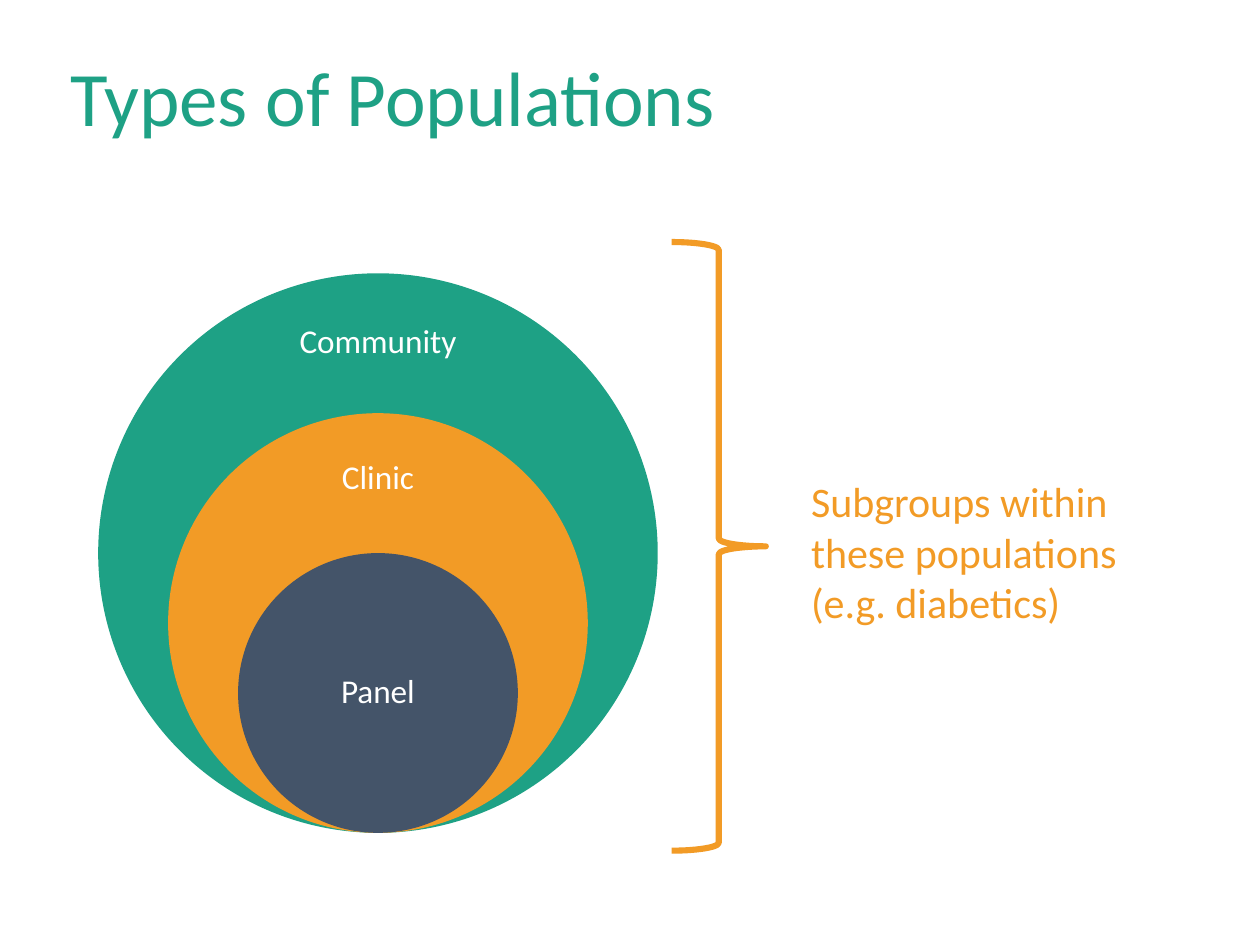
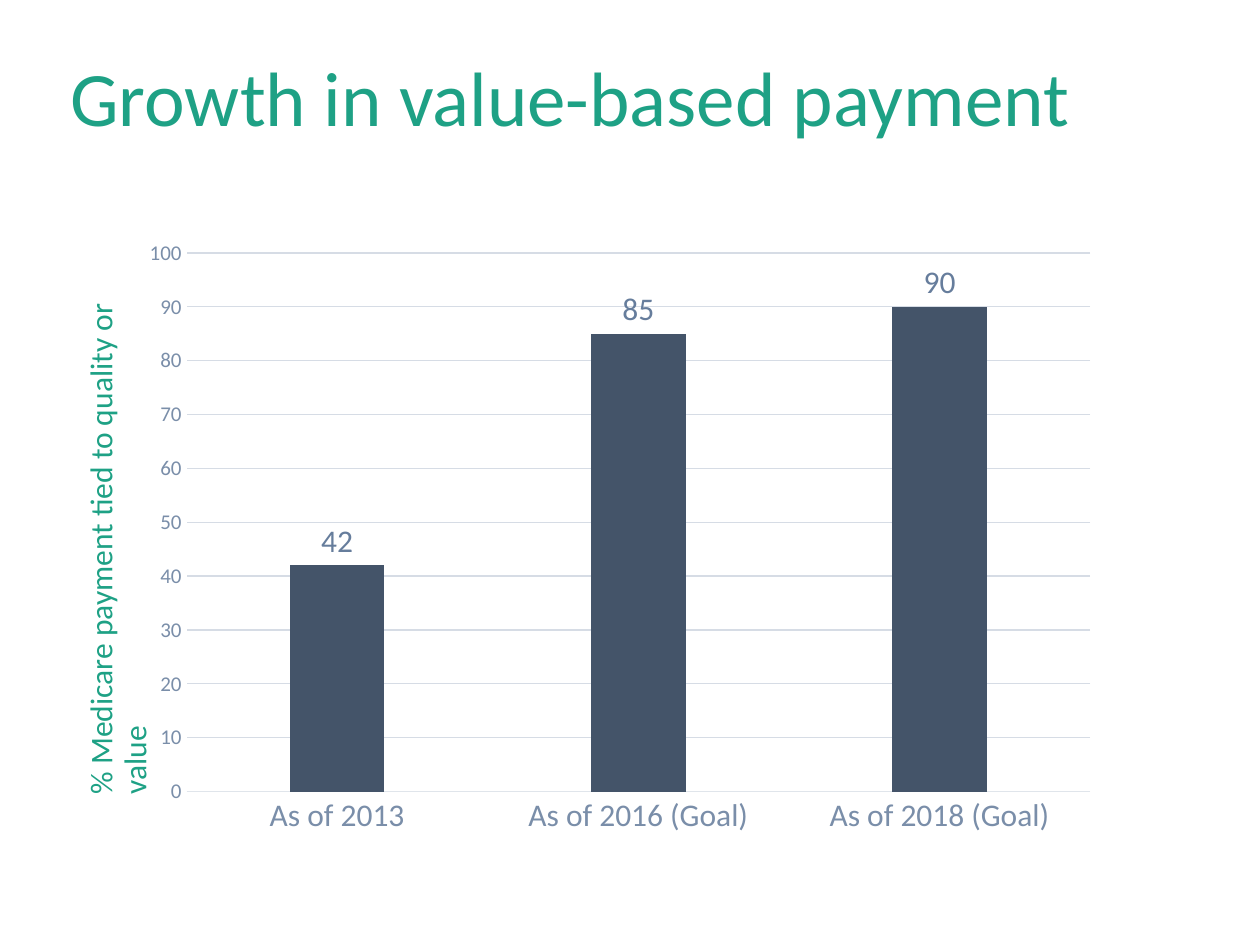
from dataclasses import dataclass
from typing import Any

from lxml import etree
from pptx import Presentation
from pptx import util as u
from pptx.chart.data import CategoryChartData
from pptx.dml.color import RGBColor
from pptx.enum import chart as ch
from pptx.enum import shapes, text

FONT = "Calibri"
HEX = {
    "green": "1EA185",
    "gold": "F29B26",
    "slate": "445469",
    "white": "FFFFFF",
    "axis": "7A8EA9",
    "value": "667D9C",
    "base": "E0E5EB",
    "grid": "D6DCE5",
}
HEAD = {
    "margin_left": u.Cm(0.25),
    "margin_right": u.Cm(0.25),
    "margin_top": u.Cm(0.03),
    "margin_bottom": u.Cm(0.13),
    "vertical_anchor": text.MSO_ANCHOR.TOP,
    "auto_size": text.MSO_AUTO_SIZE.NONE,
    "word_wrap": True,
}
NOTE = {"word_wrap": True}
LABEL = {"word_wrap": True, "vertical_anchor": text.MSO_ANCHOR.MIDDLE}
LEFT = {"alignment": text.PP_ALIGN.LEFT, "line_spacing": 0.9}
MID = {"alignment": text.PP_ALIGN.CENTER, "line_spacing": 0.9}


@dataclass
class Box:
    """A place on the slide, in centimetres."""
    left: float
    top: float
    width: float
    height: float

    def cm(self) -> list[u.Cm]:
        return [u.Cm(v) for v in (self.left, self.top, self.width, self.height)]


@dataclass
class Ring:
    name: str
    hue: str
    size: float
    mid: float  # height of the centre of the label


RINGS = [
    Ring("Community", "green", 11.28, 6.92),
    Ring("Clinic", "gold", 8.46, 9.65),
    Ring("Panel", "slate", 5.64, 13.96),
]
CENTRE, FLOOR = 7.62, 16.79


def rgb(hue: str) -> RGBColor:
    return RGBColor.from_string(HEX[hue])


def put(obj: Any, form: dict[str, Any]) -> None:
    """Set each format value on the object."""
    for key, val in form.items():
        setattr(obj, key, val)


def ink(font: Any, size: float, hue: str) -> None:
    put(font, {"name": FONT, "size": u.Pt(size)})
    font.color.rgb = rgb(hue)


def stroke(line: Any, hue: str, width: float) -> None:
    line.color.rgb = rgb(hue)
    line.width = u.Pt(width)


def write(shape: Any, words: str, size: float, hue: str,
          frame: dict[str, Any], para: dict[str, Any]) -> None:
    body = shape.text_frame
    body.text = words
    put(body, frame)
    put(body.paragraphs[0], para)
    ink(body.paragraphs[0].runs[0].font, size, hue)


def start(prs: Any, title: str) -> Any:
    """Add a slide with its title."""
    slide = prs.slides.add_slide(prs.slide_layouts[5])
    head = slide.shapes.title
    put(head, dict(zip(("left", "top", "width", "height"),
                       Box(1.17, 1.17, 22.86, 2).cm())))
    write(head, title, 44, "green", HEAD, LEFT)
    return slide


def ring(slide: Any, item: Ring) -> None:
    place = Box(CENTRE - item.size / 2, FLOOR - item.size, item.size, item.size)
    disc = slide.shapes.add_shape(shapes.MSO_SHAPE.OVAL, *place.cm())
    disc.shadow.inherit = False
    disc.fill.solid()
    disc.fill.fore_color.rgb = rgb(item.hue)
    disc.line.fill.background()
    wide, high = 4, 1.6
    spot = Box(CENTRE - wide / 2, item.mid - high / 2, wide, high)
    write(slide.shapes.add_textbox(*spot.cm()), item.name, 19, "white", LABEL, MID)


def groups(prs: Any) -> None:
    slide = start(prs, "Types of Populations")
    for item in RINGS:
        ring(slide, item)
    note = slide.shapes.add_textbox(*Box(16.1, 9.47, 7.39, 3.33).cm())
    write(note, "Subgroups within these populations (e.g. diabetics)",
          24, "gold", NOTE, {})
    brace = slide.shapes.add_shape(shapes.MSO_SHAPE.RIGHT_BRACE,
                                   *Box(13.54, 4.88, 1.9, 12.27).cm())
    brace.shadow.inherit = False
    brace.fill.background()
    stroke(brace.line, "gold", 3.5)


def layout(chart: Any, **edges: float) -> None:
    """Fix the inner plot area as shares of the chart."""
    area = chart.plots[0]._element.getparent()
    space = "{%s}" % area.nsmap["c"]
    for old in area.findall(space + "layout"):
        area.remove(old)
    outer = etree.Element(space + "layout")
    inner = etree.SubElement(outer, space + "manualLayout")
    modes = {"layoutTarget": "inner", "xMode": "edge", "yMode": "edge"}
    for tag, val in {**modes, **edges}.items():
        etree.SubElement(inner, space + tag).set("val", str(val))
    area.insert(0, outer)


def growth(prs: Any) -> None:
    slide = start(prs, "Growth in value-based payment")
    data = CategoryChartData()
    data.categories = ["As of 2013", "As of 2016 (Goal)", "As of 2018 (Goal)"]
    data.add_series("Series 1", [42, 85, 90])
    chart = slide.shapes.add_chart(ch.XL_CHART_TYPE.COLUMN_CLUSTERED,
                                   *Box(1.17, 4.45, 22.35, 13.54).cm(), data).chart
    put(chart, {"has_legend": False, "has_title": False})
    ink(chart.font, 10, "slate")
    layout(chart, x=0.116, y=0.048, w=0.815, h=0.802)

    plot = chart.plots[0]
    put(plot, {"gap_width": 219, "overlap": -27, "vary_by_categories": False,
               "has_data_labels": True})
    put(plot.data_labels, {"show_value": True,
                           "position": ch.XL_LABEL_POSITION.OUTSIDE_END})
    ink(plot.data_labels.font, 18, "value")
    fill = plot.series[0].format.fill
    fill.solid()
    fill.fore_color.rgb = rgb("slate")

    cats, vals = chart.category_axis, chart.value_axis
    for axis, size in ((cats, 18), (vals, 12)):
        put(axis, {"major_tick_mark": ch.XL_TICK_MARK.NONE,
                   "minor_tick_mark": ch.XL_TICK_MARK.NONE})
        ink(axis.tick_labels.font, size, "axis")
    stroke(cats.format.line, "base", 0.75)
    put(vals, {"minimum_scale": 0, "maximum_scale": 100, "major_unit": 10})
    vals.format.line.fill.background()
    stroke(vals.major_gridlines.format.line, "grid", 0.75)

    side = slide.shapes.add_textbox(*Box(-3.71, 9.8, 11.86, 1.07).cm())
    side.rotation = 270
    write(side, "% Medicare payment tied to quality or value",
          18, "green", HEAD, LEFT)


def main() -> None:
    prs = Presentation()
    put(prs, {"slide_width": u.Cm(25.4), "slide_height": u.Cm(19.05)})
    groups(prs)
    growth(prs)
    prs.save("out.pptx")


if __name__ == "__main__":
    main()
